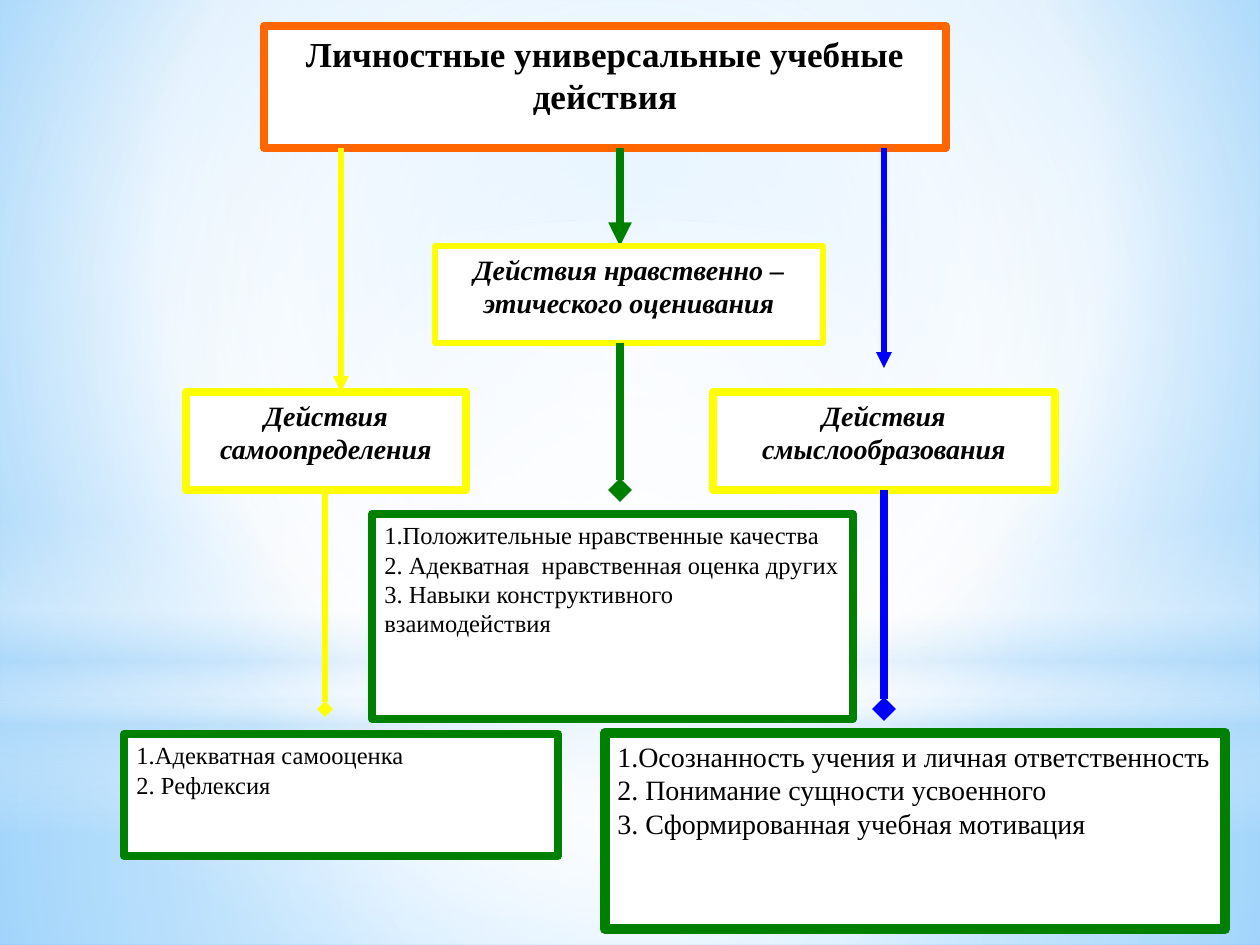
from dataclasses import dataclass

from lxml.etree import SubElement
from pptx import Presentation
from pptx.dml.color import RGBColor
from pptx.enum.shapes import MSO_CONNECTOR, MSO_SHAPE
from pptx.enum.text import MSO_ANCHOR, PP_ALIGN
from pptx.oxml import parse_xml
from pptx.oxml.ns import nsdecls, qn
from pptx.util import Emu, Pt

PIXEL = 914400 / 126
FONT = "Times New Roman"
COLORS = {
    "white": "FFFFFF", "black": "000000", "orange": "FF6600",
    "yellow": "FFFF00", "green": "008000", "blue": "0000FF",
    "sky": "9ED5FF", "deep": "5BB9FF", "mist": "B4DCFA",
}


@dataclass
class Gradient:
    stops: list[tuple[int, str, int]]  # position %, colour, opacity %
    focus: tuple[int, int, int, int] | None = (50, 50, 50, 50)  # None: downwards


@dataclass
class Glow:
    area: tuple[int, int, int, int]
    gradient: Gradient
    preset: MSO_SHAPE = MSO_SHAPE.RECTANGLE


@dataclass
class Box:
    area: tuple[int, int, int, int]
    color: str
    width: float
    size: int
    lines: list[str]
    heading: bool = False
    italic: bool = False


@dataclass
class Arrow:
    x: int
    top: int
    bottom: int
    color: str
    width: float
    head: str


BACKDROP = Gradient([(0, "sky", 100), (60, "white", 100), (100, "deep", 100)],
                    (20, 10, 20, 60))
GLOWS = [
    Glow((0, 703, 1260, 242),
         Gradient([(0, "white", 91), (37, "white", 76), (100, "mist", 79)])),
    Glow((0, 0, 1260, 703),
         Gradient([(0, "white", 89), (48, "white", 62), (100, "mist", 79)])),
    Glow((0, 519, 1260, 315),
         Gradient([(0, "white", 0), (29, "white", 30), (45, "mist", 40),
                   (55, "white", 26), (65, "mist", 60), (100, "white", 0)], None)),
    Glow((0, 220, 1260, 703),
         Gradient([(0, "white", 100), (56, "white", 0)]), MSO_SHAPE.OVAL),
]

LEFT, MIDDLE, RIGHT = 341, 620, 884
DIAGRAM = [
    # Title and the arrows to the three kinds of actions
    Box((264, 26, 682, 122), "orange", 4.5, 20,
        ["Личностные универсальные учебные действия"], True),
    Arrow(MIDDLE, 148, 246, "green", 4.5, "triangle"),
    Arrow(LEFT, 148, 392, "yellow", 3, "triangle"),
    Arrow(RIGHT, 148, 368, "blue", 3, "triangle"),
    # Kinds of actions
    Box((435, 246, 388, 97), "yellow", 3, 16,
        ["Действия нравственно – этического оценивания"], True, True),
    Box((713, 392, 342, 98), "yellow", 4.5, 16,
        ["Действия смыслообразования"], True, True),
    Box((186, 392, 280, 98), "yellow", 4.5, 16,
        ["Действия самоопределения"], True, True),
    # Arrows to the details
    Arrow(325, 490, 709, "yellow", 3, "diamond"),
    Arrow(MIDDLE, 343, 490, "green", 4.5, "diamond"),
    Arrow(RIGHT, 490, 709, "blue", 4.5, "diamond"),
    # Details
    Box((372, 514, 481, 205), "green", 4.5, 14,
        ["1.Положительные нравственные качества",
         "2. Адекватная  нравственная оценка других",
         "3. Навыки конструктивного взаимодействия"]),
    Box((124, 734, 434, 122), "green", 4.5, 14,
        ["1.Адекватная самооценка", "2. Рефлексия"]),
    Box((605, 733, 620, 196), "green", 6, 16,
        ["1.Осознанность учения и личная ответственность",
         "2. Понимание сущности усвоенного",
         "3. Сформированная учебная мотивация"]),
]


def px(value: int) -> Emu:
    return Emu(round(value * PIXEL))


def rgb(name: str) -> RGBColor:
    return RGBColor.from_string(COLORS[name])


def apply_gradient(parent, gradient: Gradient) -> None:
    """Swap the solid fill inside parent for a gradient."""
    stops = "".join(
        f'<a:gs pos="{position * 1000}"><a:srgbClr val="{COLORS[color]}">'
        f'<a:alpha val="{opacity * 1000}"/></a:srgbClr></a:gs>'
        for position, color, opacity in gradient.stops)
    if gradient.focus:
        sides = " ".join(f'{side}="{share * 1000}"'
                         for side, share in zip("ltrb", gradient.focus))
        direction = f'<a:path path="circle"><a:fillToRect {sides}/></a:path>'
    else:
        direction = '<a:lin ang="5400000" scaled="0"/>'
    fill = parse_xml(f'<a:gradFill {nsdecls("a")} rotWithShape="1">'
                     f'<a:gsLst>{stops}</a:gsLst>{direction}</a:gradFill>')
    parent.replace(parent.find(qn("a:solidFill")), fill)


def add_plain_shape(page, preset: MSO_SHAPE, area: tuple[int, int, int, int]):
    shape = page.shapes.add_shape(preset, *map(px, area))
    shape.shadow.inherit = False
    shape.fill.solid()
    shape.fill.fore_color.rgb = rgb("white")
    return shape


def draw_glow(page, glow: Glow) -> None:
    shape = add_plain_shape(page, glow.preset, glow.area)
    shape.line.fill.background()
    apply_gradient(shape.element.spPr, glow.gradient)


def draw_box(page, box: Box) -> None:
    shape = add_plain_shape(page, MSO_SHAPE.RECTANGLE, box.area)
    shape.line.color.rgb = rgb(box.color)
    shape.line.width = Pt(box.width)
    frame = shape.text_frame
    frame.word_wrap = True
    frame.vertical_anchor = MSO_ANCHOR.TOP
    for index, line in enumerate(box.lines):
        para = frame.add_paragraph() if index else frame.paragraphs[0]
        para.alignment = PP_ALIGN.CENTER if box.heading else PP_ALIGN.LEFT
        span = para.add_run()
        span.text = line
        span.font.name = FONT
        span.font.size = Pt(box.size)
        span.font.bold = box.heading
        span.font.italic = box.italic
        span.font.color.rgb = rgb("black")


def draw_arrow(page, arrow: Arrow) -> None:
    connector = page.shapes.add_connector(
        MSO_CONNECTOR.STRAIGHT, px(arrow.x), px(arrow.top), px(arrow.x), px(arrow.bottom))
    connector.line.color.rgb = rgb(arrow.color)
    connector.line.width = Pt(arrow.width)
    properties = connector.element.spPr
    SubElement(properties.find(qn("a:ln")), qn("a:tailEnd"), type=arrow.head)
    SubElement(properties, qn("a:effectLst"))


def main() -> None:
    deck = Presentation()
    deck.slide_width, deck.slide_height = px(1260), px(945)
    page = deck.slides.add_slide(deck.slide_layouts[6])

    # Background
    page.background.fill.solid()
    page.background.fill.fore_color.rgb = rgb("white")
    apply_gradient(page.element.find(".//" + qn("p:bgPr")), BACKDROP)
    for glow in GLOWS:
        draw_glow(page, glow)

    # Diagram
    for item in DIAGRAM:
        if isinstance(item, Box):
            draw_box(page, item)
        else:
            draw_arrow(page, item)

    deck.save("out.pptx")


if __name__ == "__main__":
    main()
